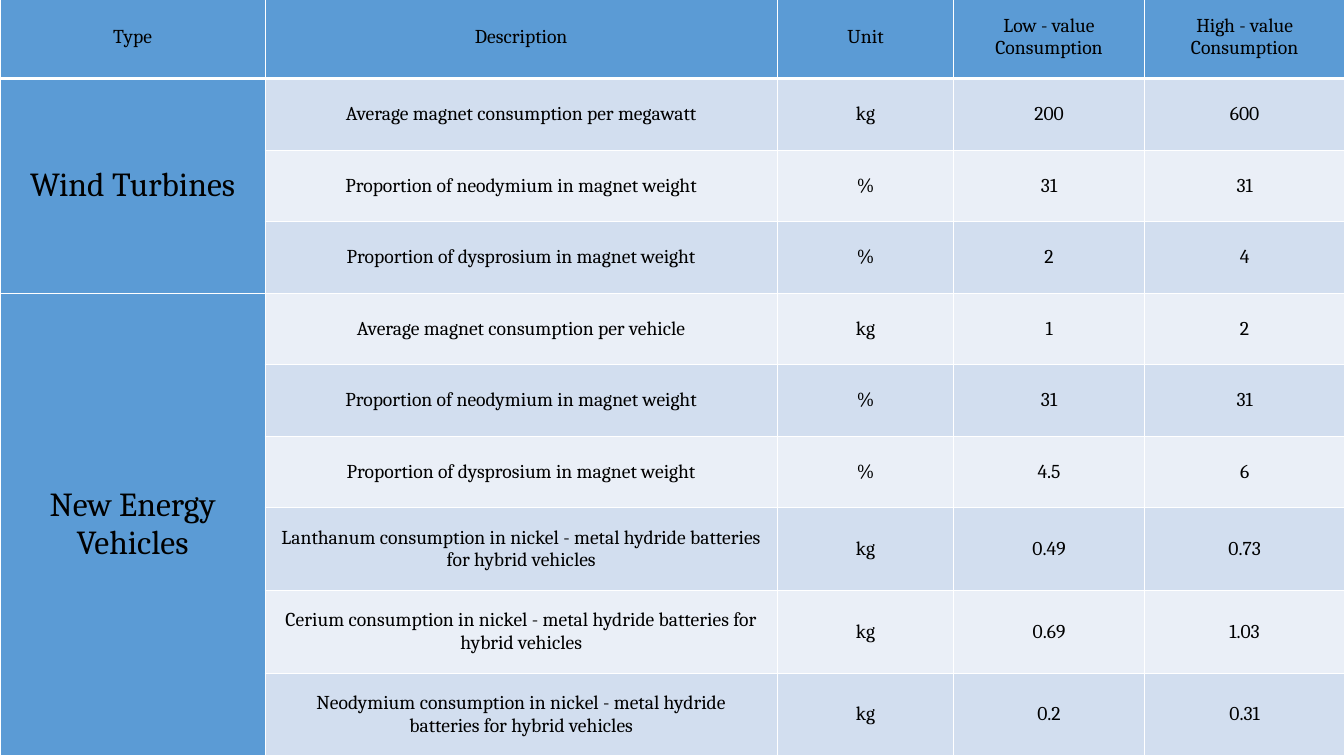
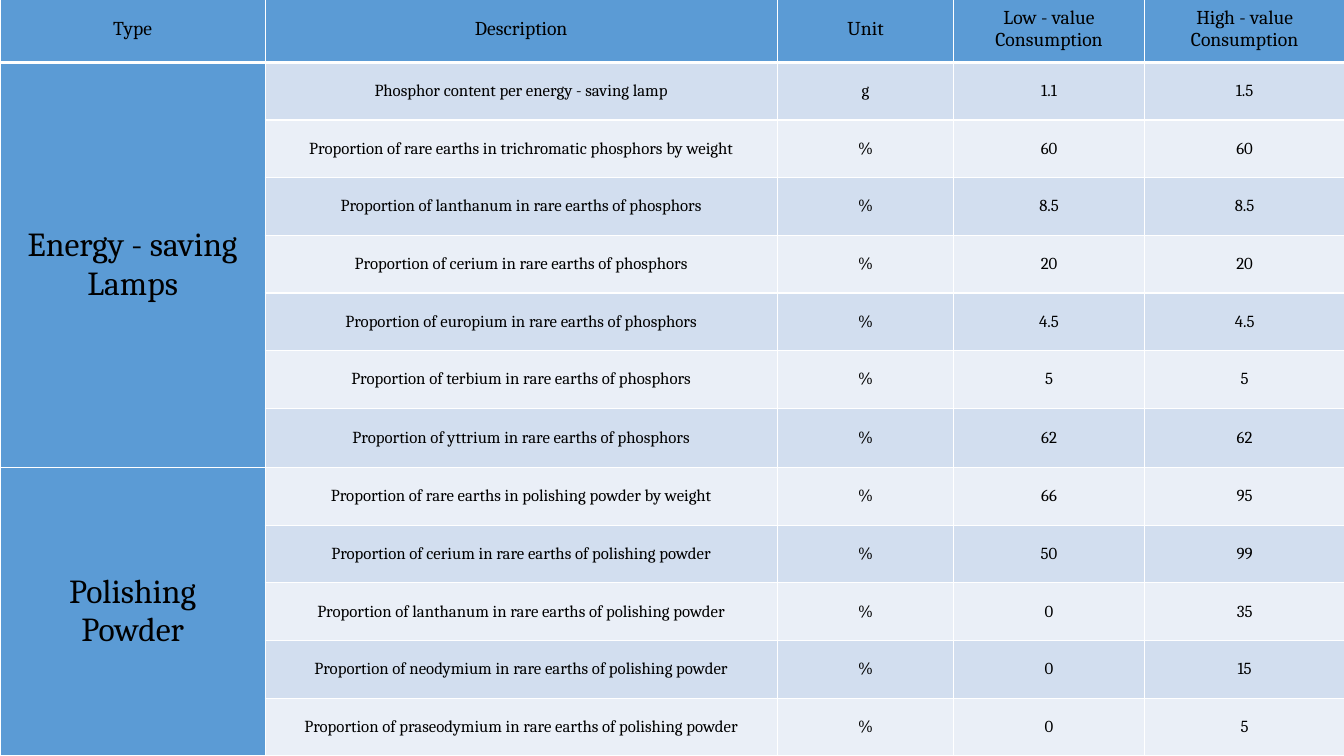
from pptx import Presentation
from pptx.dml.color import RGBColor
from pptx.enum.text import MSO_ANCHOR, PP_ALIGN
from pptx.oxml.ns import qn
from pptx.util import Inches, Pt
from lxml.etree import SubElement

SLIDE_W, SLIDE_H = 13.33, 7.5
TABLE_TOP, TABLE_H = -0.04, 7.54
COLUMNS = [2.63, 5.08, 1.75, 1.89, 1.99]
MARGIN_X, MARGIN_Y = 0.15, 0.1
FONT = "Cambria"
HEADER_PT, TYPE_PT = 14, 24
THIN_PT, THICK_PT = 1, 3
COLORS = {
    "header": "5B9BD5",
    "odd": "D2DEEF",
    "even": "EAEFF7",
    "border": "FFFFFF",
    "text": "000000",
}
HEADINGS = ["Type", "Description", "Unit", "Low - value Consumption", "High - value Consumption"]

MAGNET_SHARES = "Proportion of {} in magnet weight"
BATTERY = "{} consumption in nickel - metal hydride batteries for hybrid vehicles"
PHOSPHORS = "Proportion of {} in rare earths of phosphors"
POLISHING = "Proportion of {} in rare earths of polishing powder"

MAGNETS_AND_BATTERIES = {
    "Wind Turbines": [
        ("Average magnet consumption per megawatt", "kg", "200", "600"),
        (MAGNET_SHARES.format("neodymium"), "%", "31", "31"),
        (MAGNET_SHARES.format("dysprosium"), "%", "2", "4"),
    ],
    "New Energy Vehicles": [
        ("Average magnet consumption per vehicle", "kg", "1", "2"),
        (MAGNET_SHARES.format("neodymium"), "%", "31", "31"),
        (MAGNET_SHARES.format("dysprosium"), "%", "4.5", "6"),
        (BATTERY.format("Lanthanum"), "kg", "0.49", "0.73"),
        (BATTERY.format("Cerium"), "kg", "0.69", "1.03"),
        (BATTERY.format("Neodymium"), "kg", "0.2", "0.31"),
    ],
}
LAMPS_AND_POLISHING = {
    "Energy - saving Lamps": [
        ("Phosphor content per energy - saving lamp", "g", "1.1", "1.5"),
        ("Proportion of rare earths in trichromatic phosphors by weight", "%", "60", "60"),
        (PHOSPHORS.format("lanthanum"), "%", "8.5", "8.5"),
        (PHOSPHORS.format("cerium"), "%", "20", "20"),
        (PHOSPHORS.format("europium"), "%", "4.5", "4.5"),
        (PHOSPHORS.format("terbium"), "%", "5", "5"),
        (PHOSPHORS.format("yttrium"), "%", "62", "62"),
    ],
    "Polishing Powder": [
        ("Proportion of rare earths in polishing powder by weight", "%", "66", "95"),
        (POLISHING.format("cerium"), "%", "50", "99"),
        (POLISHING.format("lanthanum"), "%", "0", "35"),
        (POLISHING.format("neodymium"), "%", "0", "15"),
        (POLISHING.format("praseodymium"), "%", "0", "5"),
    ],
}


def set_borders(cell, row):
    """White lines all round, thicker between the header and the body."""
    widths = {
        "a:lnL": THIN_PT,
        "a:lnR": THIN_PT,
        "a:lnT": THICK_PT if row == 1 else THIN_PT,
        "a:lnB": THICK_PT if row == 0 else THIN_PT,
    }
    tcPr = cell._tc.get_or_add_tcPr()
    for tag, width in widths.items():
        line = SubElement(tcPr, qn(tag), w=str(Pt(width)))
        fill = SubElement(line, qn("a:solidFill"))
        SubElement(fill, qn("a:srgbClr"), val=COLORS["border"])


def style_cell(cell, row, col):
    set_borders(cell, row)
    band = "odd" if row % 2 else "even"
    cell.fill.solid()
    cell.fill.fore_color.rgb = RGBColor.from_string(
        COLORS["header" if row == 0 or col == 0 else band])
    cell.margin_left = cell.margin_right = Inches(MARGIN_X)
    cell.margin_top = cell.margin_bottom = Inches(MARGIN_Y)
    cell.vertical_anchor = MSO_ANCHOR.MIDDLE


def write_cell(cell, text, size):
    p = cell.text_frame.paragraphs[0]
    p.alignment = PP_ALIGN.CENTER
    r = p.add_run()
    r.text = text
    r.font.name = FONT
    r.font.size = Pt(size)
    r.font.color.rgb = RGBColor.from_string(COLORS["text"])


def set_row_heights(table, fixed):
    """Apply the fixed heights and share what is left among the other rows."""
    rows = list(table.rows)
    shared = (TABLE_H - sum(fixed.values())) / (len(rows) - len(fixed))
    for i, row in enumerate(rows):
        row.height = Inches(fixed.get(i, shared))


def add_consumption_slide(prs, groups, body_pt, fixed_heights):
    s = prs.slides.add_slide(prs.slide_layouts[6])
    n_rows = 1 + sum(len(rows) for rows in groups.values())
    table = s.shapes.add_table(
        n_rows, len(COLUMNS), 0, Inches(TABLE_TOP), Inches(SLIDE_W), Inches(TABLE_H)).table
    table.first_row = table.horz_banding = False
    for column, width in zip(table.columns, COLUMNS):
        column.width = Inches(width)
    set_row_heights(table, fixed_heights)

    for row in range(n_rows):
        for col in range(len(COLUMNS)):
            style_cell(table.cell(row, col), row, col)

    for col, heading in enumerate(HEADINGS):
        write_cell(table.cell(0, col), heading, HEADER_PT)

    first = 1
    for name, rows in groups.items():
        type_cell = table.cell(first, 0)
        type_cell.merge(table.cell(first + len(rows) - 1, 0))
        write_cell(type_cell, name, TYPE_PT)
        for row, values in enumerate(rows, first):
            for col, value in enumerate(values, 1):
                write_cell(table.cell(row, col), value, body_pt)
        first += len(rows)


def main():
    prs = Presentation()
    prs.slide_width, prs.slide_height = Inches(SLIDE_W), Inches(SLIDE_H)
    add_consumption_slide(prs, MAGNETS_AND_BATTERIES, 14, dict.fromkeys([0, 7, 8, 9], 0.82))
    add_consumption_slide(prs, LAMPS_AND_POLISHING, 12, {0: 0.66, 7: 0.59})
    prs.save("out.pptx")


if __name__ == "__main__":
    main()
